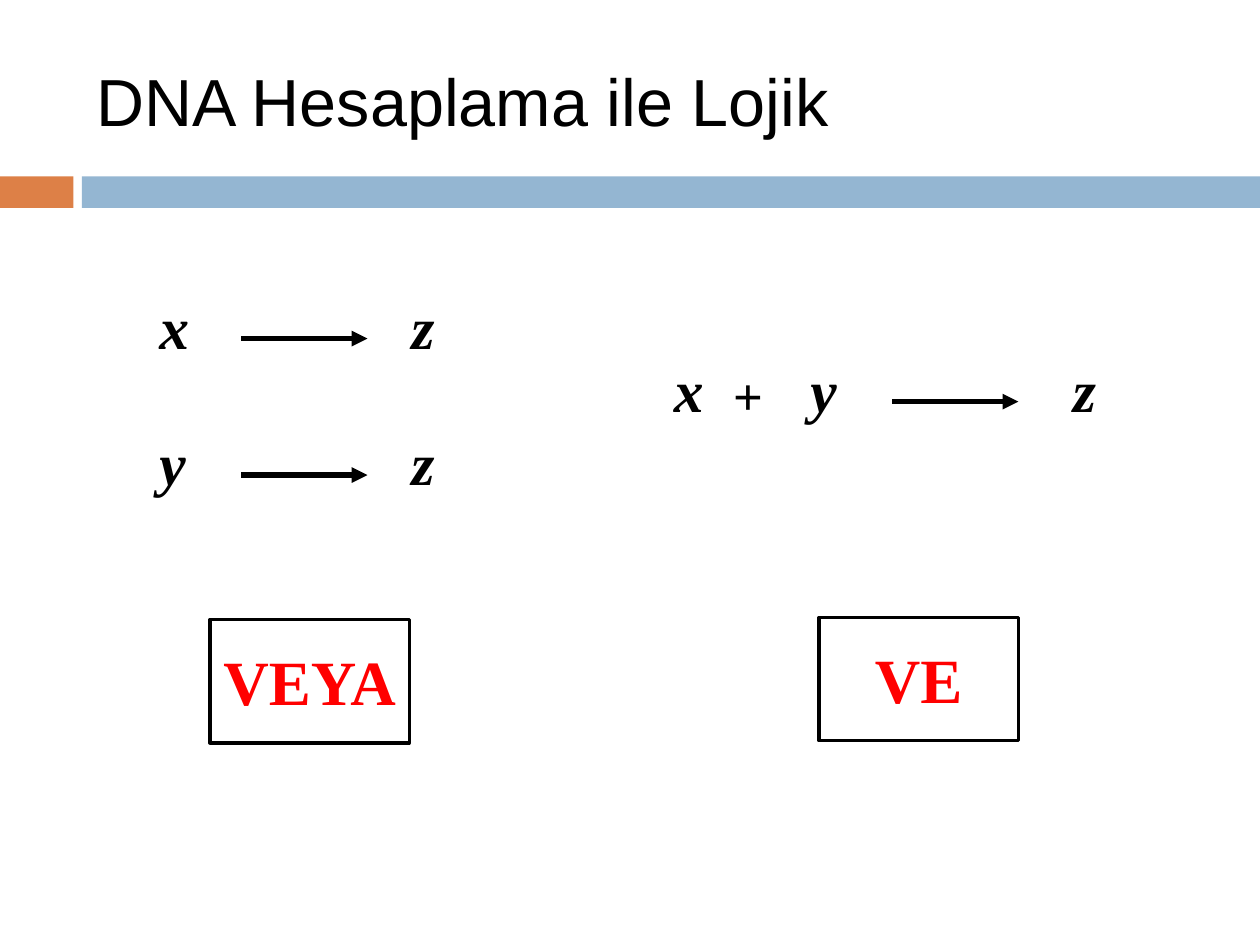
from dataclasses import dataclass

from lxml import etree
from pptx import Presentation
from pptx import util as u
from pptx.dml.color import RGBColor
from pptx.enum import shapes, text
from pptx.oxml.ns import qn

COLUMNS, ROWS = 120, 90  # twelve grid cells to the inch


@dataclass(frozen=True)
class Theme:
    black: str = "000000"
    red: str = "FF0000"
    orange: str = "DD8047"
    blue: str = "94B6D2"
    sans: str = "Arial"
    serif: str = "Times New Roman"
    title: int = 38
    gate: int = 36
    symbol: int = 34
    operator: int = 30


THEME = Theme()


def grid(*cells):
    return [u.Inches(cell / 12) for cell in cells]


def write(frame, content, *, size, font=THEME.serif, color=THEME.black,
          bold=False, italic=False, align=text.PP_ALIGN.LEFT):
    para = frame.paragraphs[0]
    para.alignment = align
    span = para.add_run()
    span.text = content
    span.font.size = u.Pt(size)
    span.font.name = font
    span.font.bold = bold
    span.font.italic = italic
    span.font.color.rgb = RGBColor.from_string(color)


def add_title(page, content):
    title = page.shapes.title
    title.left, title.top, title.width, title.height = grid(8, 3, 107, 13)
    frame = title.text_frame
    frame.auto_size = text.MSO_AUTO_SIZE.NONE
    frame.vertical_anchor = text.MSO_ANCHOR.MIDDLE
    write(frame, content, size=THEME.title, font=THEME.sans)


def add_box(page, cells, *, fill=None, line=None):
    box = page.shapes.add_shape(shapes.MSO_SHAPE.RECTANGLE, *grid(*cells))
    box.shadow.inherit = False
    if fill:
        box.fill.solid()
        box.fill.fore_color.rgb = RGBColor.from_string(fill)
    else:
        box.fill.background()
    if line:
        box.line.color.rgb = RGBColor.from_string(line)
        box.line.width = u.Pt(2)
    else:
        box.line.fill.background()
    return box


def add_gate(page, name, column, row):
    frame = add_box(page, (column, row, 19, 11.75), line=THEME.black).text_frame
    frame.word_wrap = True
    frame.vertical_anchor = text.MSO_ANCHOR.TOP
    frame.margin_left = frame.margin_right = u.Inches(0.05)
    frame.margin_top = u.Inches(0.18)
    write(frame, name, size=THEME.gate, color=THEME.red, bold=True,
          align=text.PP_ALIGN.CENTER)


def add_arrow(group, start, end, row):
    arrow = group.shapes.add_connector(
        shapes.MSO_CONNECTOR.STRAIGHT, *grid(start, row, end, row))
    arrow.line.color.rgb = RGBColor.from_string(THEME.black)
    arrow.line.width = u.Pt(3)
    etree.SubElement(arrow.line._get_or_add_ln(), qn("a:tailEnd"), type="triangle")
    etree.SubElement(arrow._element.spPr, qn("a:effectLst"))


def add_term(group, term, column, row, size):
    box = group.shapes.add_textbox(*grid(column, row, 6, 8))
    box.text_frame.word_wrap = False
    # Symbols stay flush left even though the boxes share one width.
    box.text_frame.auto_size = text.MSO_AUTO_SIZE.NONE
    write(box.text_frame, term, size=size, bold=True, italic=True)


def add_reaction(page, row, terms, arrow_start):
    """Place (term, column) pairs on one row with an arrow 12 columns long."""
    group = page.shapes.add_group_shape()
    add_arrow(group, arrow_start, arrow_start + 12, row + 5.25)
    for term, column in terms:
        if term == "+":
            add_term(group, term, column, row + 1, THEME.operator)
        else:
            add_term(group, term, column, row, THEME.symbol)


def main():
    deck = Presentation()
    deck.slide_width, deck.slide_height = grid(COLUMNS, ROWS)
    page = deck.slides.add_slide(deck.slide_layouts[5])

    add_box(page, (0, 16.8, 7, 3), fill=THEME.orange)
    add_box(page, (7.8, 16.8, COLUMNS - 7.8, 3), fill=THEME.blue)
    add_title(page, "DNA Hesaplama ile Lojik")

    for source, row in (("x", 27), ("y", 40)):
        add_reaction(page, row, [(source, 14), ("z", 38)], 23)
    add_reaction(page, 33, [("x", 63), ("+", 68.6), ("y", 76), ("z", 101)], 85)

    add_gate(page, "VEYA", 20, 59)
    add_gate(page, "VE", 78, 58.8)
    deck.save("out.pptx")


if __name__ == "__main__":
    main()
